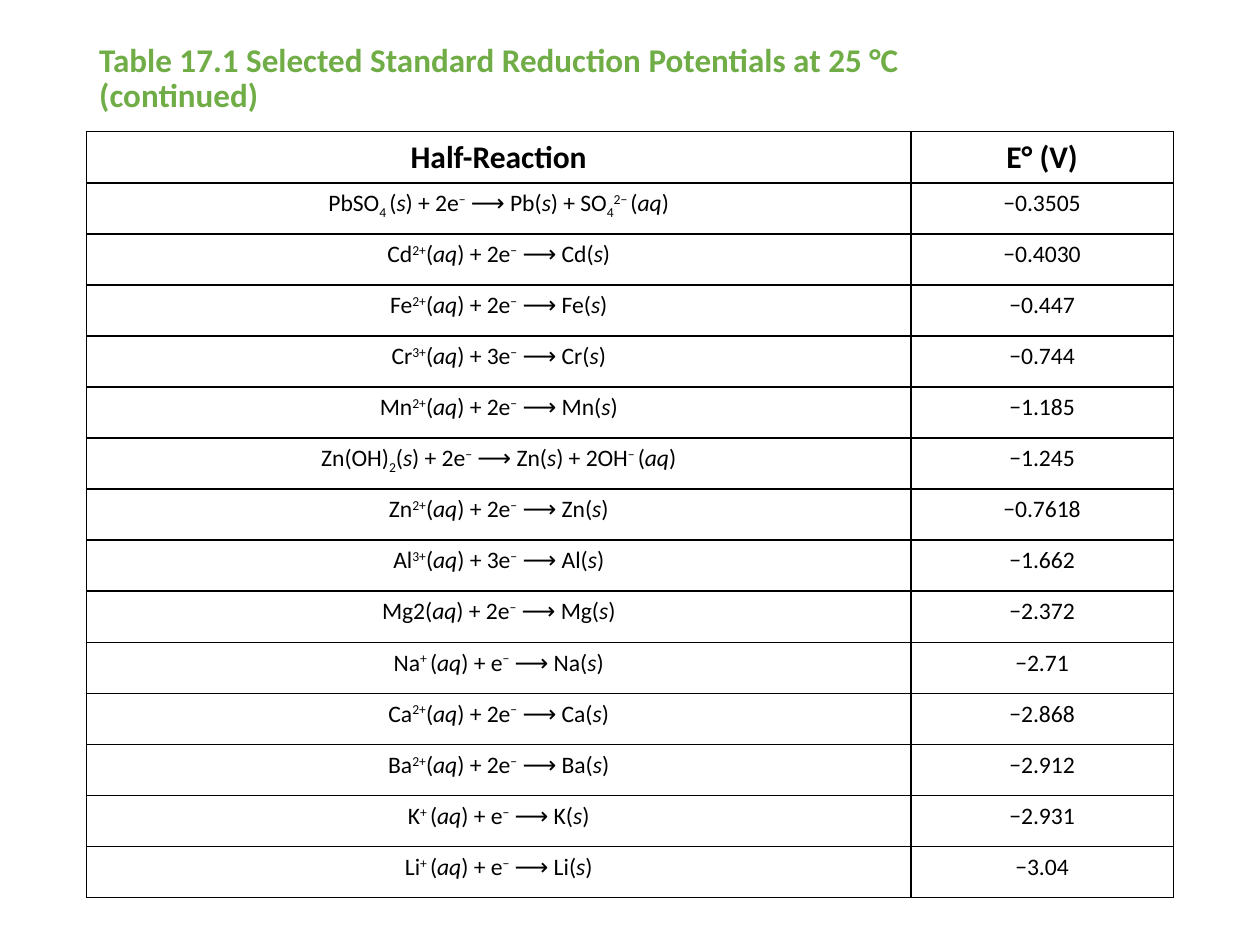
from copy import deepcopy

from pptx import Presentation
from pptx.dml.color import RGBColor as RGB
from pptx.enum.text import MSO_ANCHOR as Anchor, MSO_AUTO_SIZE as AutoSize, PP_ALIGN as Align
from pptx.oxml import parse_xml
from pptx.oxml.ns import nsdecls
from pptx.util import Pt

# Content: ^superscript^, _subscript_, *italic*
TITLE = "Table 17.1 Selected Standard Reduction Potentials at 25 °C\v(continued)"
HEADER = ("Half-Reaction", "E° (V)")
REACTIONS = [
    ("PbSO_4 _(*s*) + 2e^−^ ⟶ Pb(*s*) + SO_4_^2− ^(*aq*)", "−0.3505"),
    ("Cd^2+^(*aq*) + 2e^−^ ⟶ Cd(*s*)", "−0.4030"),
    ("Fe^2+^(*aq*) + 2e^−^ ⟶ Fe(*s*)", "−0.447"),
    ("Cr^3+^(*aq*) + 3e^−^ ⟶ Cr(*s*)", "−0.744"),
    ("Mn^2+^(*aq*) + 2e^−^ ⟶ Mn(*s*)", "−1.185"),
    ("Zn(OH)_2_(*s*) + 2e^−^ ⟶ Zn(*s*) + 2OH^− ^(*aq*)", "−1.245"),
    ("Zn^2+^(*aq*) + 2e^−^ ⟶ Zn(*s*)", "−0.7618"),
    ("Al^3+^(*aq*) + 3e^−^ ⟶ Al(*s*)", "−1.662"),
    ("Mg2(*aq*) + 2e^−^ ⟶ Mg(*s*)", "−2.372"),
    ("Na^+ ^(*aq*) + e^−^ ⟶ Na(*s*)", "−2.71"),
    ("Ca^2+^(*aq*) + 2e^−^ ⟶ Ca(*s*)", "−2.868"),
    ("Ba^2+^(*aq*) + 2e^−^ ⟶ Ba(*s*)", "−2.912"),
    ("K^+ ^(*aq*) + e^−^ ⟶ K(*s*)", "−2.931"),
    ("Li^+ ^(*aq*) + e^−^ ⟶ Li(*s*)", "−3.04"),
]

# Formats
COLORS = {"title": "70AD47", "text": "000000", "border": "000000"}
TITLE_FONT = {"name": "Calibri", "size": Pt(18.9), "bold": True}
HEADER_FONT = {"name": "Calibri", "size": Pt(18), "bold": True}
BODY_FONT = {"name": "Calibri", "size": Pt(13.5), "bold": False}
BASELINES = {"^": "30000", "_": "-25000"}
MARKS = "^_*"

# Layout in points
LEFT, WIDTH = 49.5, 621
TITLE_TOP, TITLE_HEIGHT = 28.8, 33.1
TABLE_TOP, ROW_HEIGHT = 75.3, 29.18
COLUMN_WIDTHS = (471, 150)


def format_font(font, values, color):
    for name, value in values.items():
        setattr(font, name, value)
    font.color.rgb = RGB.from_string(COLORS[color])


def split_marks(text):
    """Yield (mark, piece) pairs; mark is empty for plain text."""
    mark, piece = "", ""
    for letter in text:
        if letter in MARKS:
            if piece:
                yield mark, piece
            mark, piece = ("" if mark else letter), ""
        else:
            piece += letter
    if piece:
        yield mark, piece


def add_borders(cell):
    properties = cell._tc.get_or_add_tcPr()
    for side in "LRTB":
        properties.append(parse_xml(
            f'<a:ln{side} {nsdecls("a")} w="{Pt(1)}"><a:solidFill>'
            f'<a:srgbClr val="{COLORS["border"]}"/></a:solidFill></a:ln{side}>'))


def fill_cell(cell, text, font_values):
    add_borders(cell)
    cell.fill.background()
    paragraph = cell.text_frame.paragraphs[0]
    paragraph.alignment = Align.CENTER
    for mark, piece in split_marks(text):
        run = paragraph.add_run()
        run.text = piece
        format_font(run.font, font_values, "text")
        if mark == "*":
            run.font.italic = True
        elif mark:
            run.font._element.set("baseline", BASELINES[mark])


def add_title(slide):
    title = slide.shapes.title
    title.left, title.top = Pt(LEFT), Pt(TITLE_TOP)
    title.width, title.height = Pt(WIDTH), Pt(TITLE_HEIGHT)
    frame = title.text_frame
    frame.auto_size = AutoSize.NONE
    frame.vertical_anchor = Anchor.MIDDLE
    paragraph = frame.paragraphs[0]
    paragraph.text = TITLE
    paragraph.alignment = Align.LEFT
    paragraph.line_spacing = 0.9
    for run in paragraph.runs:
        format_font(run.font, TITLE_FONT, "title")
    # The line break needs the same size as the text around it
    for line_break in paragraph._p.findall("{*}br"):
        line_break.append(deepcopy(paragraph.runs[0].font._element))


def add_potentials_table(slide):
    rows = [HEADER] + REACTIONS
    table = slide.shapes.add_table(
        len(rows), len(HEADER), Pt(LEFT), Pt(TABLE_TOP),
        Pt(WIDTH), Pt(ROW_HEIGHT * len(rows))).table
    table.horz_banding = False
    for column, width in zip(table.columns, COLUMN_WIDTHS):
        column.width = Pt(width)
    for index, (row, texts) in enumerate(zip(table.rows, rows)):
        row.height = Pt(ROW_HEIGHT)
        for cell, text in zip(row.cells, texts):
            fill_cell(cell, text, BODY_FONT if index else HEADER_FONT)


def main():
    presentation = Presentation()
    presentation.slide_width, presentation.slide_height = Pt(720), Pt(540)
    slide = presentation.slides.add_slide(presentation.slide_layouts[5])
    add_title(slide)
    add_potentials_table(slide)
    presentation.save("out.pptx")


if __name__ == "__main__":
    main()
